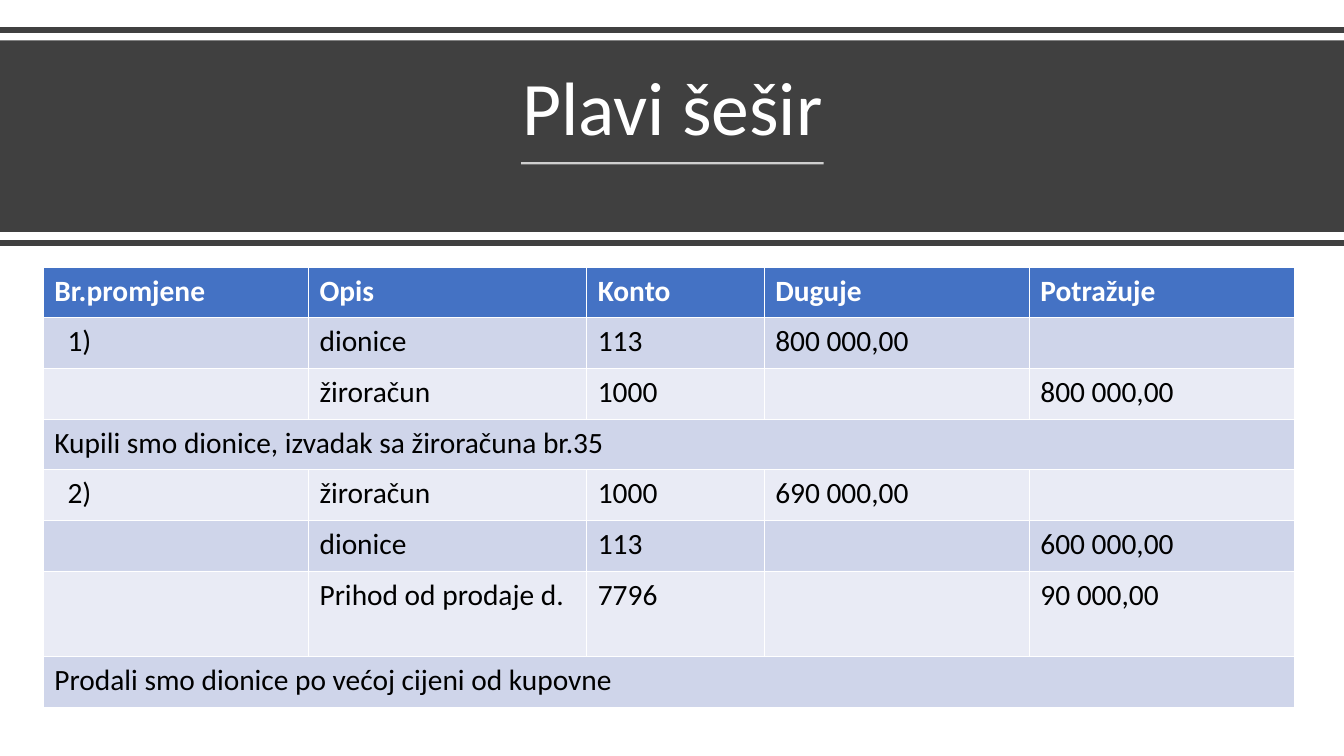
"""Build the "Plavi šešir" slide with its journal entry table."""
from lxml.etree import SubElement
from pptx import Presentation
from pptx.dml.color import RGBColor
from pptx.enum.shapes import MSO_CONNECTOR, MSO_SHAPE
from pptx.enum.text import MSO_ANCHOR, MSO_AUTO_SIZE, PP_ALIGN
from pptx.oxml.ns import qn
from pptx.util import Inches, Pt

COLORS = {"dark": "404040", "white": "FFFFFF", "black": "000000",
          "header": "4472C4", "odd": "CFD5EA", "even": "E9EBF5"}
RGB = {name: RGBColor.from_string(value) for name, value in COLORS.items()}


def add_rule(s, x1, x2, y, color, width):
    line = s.shapes.add_connector(MSO_CONNECTOR.STRAIGHT, Inches(x1), Inches(y),
                                  Inches(x2), Inches(y))
    line.line.color.rgb = RGB[color]
    line.line.width = Pt(width)
    SubElement(line.element.spPr, qn("a:effectLst"))
    return line


def set_text(tf, text, size, color, bold=False):
    p = tf.paragraphs[0]
    r = p.add_run()
    r.text = text
    r.font.color.rgb = RGB[color]
    for name, value in {"name": "Calibri", "size": Pt(size), "bold": bold}.items():
        setattr(r.font, name, value)
    return p


prs = Presentation()
prs.slide_width, prs.slide_height = Inches(13.33), Inches(7.5)
s = prs.slides.add_slide(prs.slide_layouts[5])

for y in (0.3, 2.41):
    add_rule(s, 0, 13.33, y, "dark", 4)

band = s.shapes.add_shape(MSO_SHAPE.RECTANGLE, 0, Inches(0.4), Inches(13.33), Inches(1.9))
band.shadow.inherit = False
band.fill.solid()
band.fill.fore_color.rgb = RGB["dark"]
band.line.fill.background()

title = s.shapes.title
band.element.addnext(title.element)
title.left, title.top = Inches(0.58), Inches(0.54)
title.width, title.height = Inches(12.18), Inches(1.02)
tf = title.text_frame
for name, value in {"vertical_anchor": MSO_ANCHOR.BOTTOM, "word_wrap": True,
                    "auto_size": MSO_AUTO_SIZE.NONE}.items():
    setattr(tf, name, value)
p = set_text(tf, "Plavi šešir", 54, "white")
p.alignment = PP_ALIGN.CENTER
p.line_spacing = 0.9

underline = add_rule(s, 5.17, 8.17, 1.62, "white", 1.5)
for clr in underline.element.spPr.iter(qn("a:srgbClr")):
    SubElement(clr, qn("a:alpha"), val="75000")

entries = [
    ["Br.promjene", "Opis", "Konto", "Duguje", "Potražuje"],
    ["1)", "dionice", "113", "800 000,00", ""],
    ["", "žiroračun", "1000", "", "800 000,00"],
    ["Kupili smo dionice, izvadak sa žiroračuna br.35"],
    ["2)", "žiroračun", "1000", "690 000,00", ""],
    ["", "dionice", "113", "", "600 000,00"],
    ["", "Prihod od prodaje d.", "7796", "", "90 000,00"],
    ["Prodali smo dionice po većoj cijeni od kupovne"],
]
widths = [2.63, 2.76, 1.76, 2.63, 2.63]
tall_row, tall_height = 6, 0.85
row_height = (4.37 - tall_height) / (len(entries) - 1)

table = s.shapes.add_table(len(entries), len(widths), Inches(0.43), Inches(2.65),
                           Inches(12.42), Inches(4.37)).table
for column, width in zip(table.columns, widths):
    column.width = Inches(width)

for i, entry in enumerate(entries):
    table.rows[i].height = Inches(tall_height if i == tall_row else row_height)
    fill = "header" if i == 0 else "odd" if i % 2 else "even"
    for j in range(len(widths)):
        cell = table.cell(i, j)
        cell.fill.solid()
        cell.fill.fore_color.rgb = RGB[fill]
        text = entry[j] if j < len(entry) else ""
        left = 0.24 if text.endswith(")") else 0.11
        for side, inset in {"left": left, "right": 0.11, "top": 0.06, "bottom": 0.06}.items():
            setattr(cell, f"margin_{side}", Inches(inset))
        if text:
            set_text(cell.text_frame, text, 21, "black" if i else "white", i == 0)
    if len(entry) == 1:
        table.cell(i, 0).merge(table.cell(i, len(widths) - 1))

prs.save("out.pptx")
